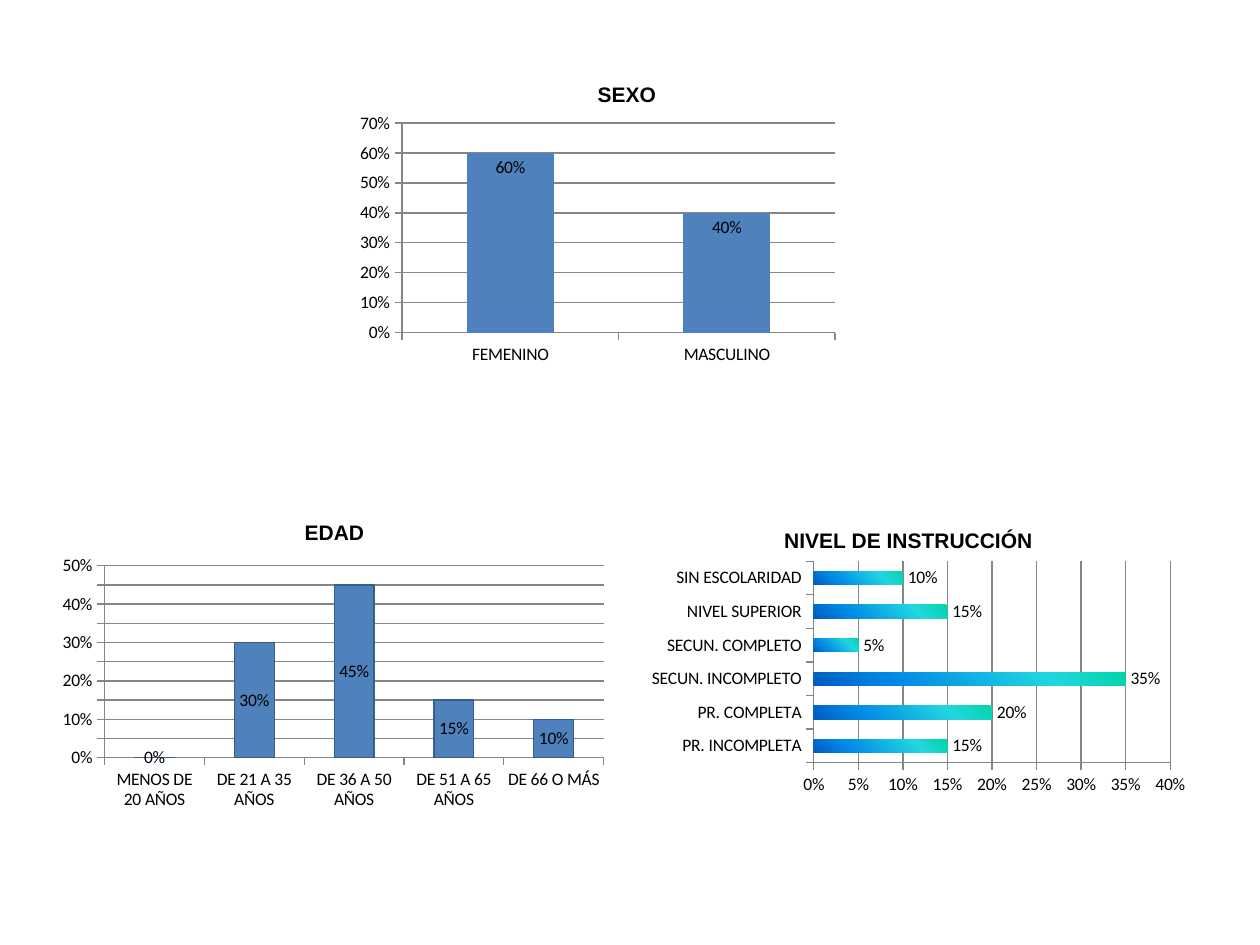
from lxml import etree
from pptx import Presentation
from pptx.chart.data import CategoryChartData
from pptx.dml.color import RGBColor
from pptx.enum import chart as kinds
from pptx.oxml.ns import qn
from pptx.util import Inches, Pt

COLOURS = {"text": "000000", "bar": "4F81BD", "outline": "385D8A", "axis": "868686"}
GRADIENT = [(0, "03D4A8"), (25, "21D6E0"), (75, "0087E6"), (100, "005CBF")]
STACKED = kinds.XL_CHART_TYPE.COLUMN_STACKED
BARS = kinds.XL_CHART_TYPE.BAR_CLUSTERED
LABEL = kinds.XL_LABEL_POSITION

CHARTS = [
    {"title": "SEXO", "type": STACKED, "at": (2.8, 0.52, 4.35, 2.41),
     "plot": (0.09, 0.19, 0.79, 0.69), "max": 0.7, "unit": 0.1,
     "label": LABEL.INSIDE_END, "fill": "solid",
     "values": {"FEMENINO": 0.6, "MASCULINO": 0.4}},
    {"title": "EDAD", "type": STACKED, "at": (0.43, 3.99, 4.45, 2.5),
     "plot": (0.09, 0.2, 0.89, 0.61), "max": 0.5, "unit": 0.05,
     "label": LABEL.CENTER, "fill": "outlined",
     "values": {"MENOS DE 20 AÑOS": 0, "DE 21 A 35 AÑOS": 0.3, "DE 36 A 50 AÑOS": 0.45,
                "DE 51 A 65 AÑOS": 0.15, "DE 66 O MÁS": 0.1}},
    {"title": "NIVEL DE INSTRUCCIÓN", "type": BARS, "at": (5, 4.06, 4.42, 2.32),
     "plot": (0.33, 0.17, 0.64, 0.69), "max": 0.4, "unit": 0.05,
     "label": LABEL.OUTSIDE_END, "fill": "gradient",
     "values": {"PR. INCOMPLETA": 0.15, "PR. COMPLETA": 0.2, "SECUN. INCOMPLETO": 0.35,
                "SECUN. COMPLETO": 0.05, "NIVEL SUPERIOR": 0.15, "SIN ESCOLARIDAD": 0.1}},
]


def set_plot_area(chart, bounds):
    """Fix the inner plot area as fractions of the chart (x, y, width, height)."""
    area = chart._chartSpace.chart.plotArea
    for old in area.findall(qn("c:layout")):
        area.remove(old)
    layout = etree.Element(qn("c:layout"))
    area.insert(0, layout)
    manual = etree.SubElement(layout, qn("c:manualLayout"))
    settings = [("layoutTarget", "inner"), ("xMode", "edge"), ("yMode", "edge")]
    settings += zip("xywh", bounds)
    for name, value in settings:
        etree.SubElement(manual, qn(f"c:{name}")).set("val", str(value))


def fill_gradient(series):
    fill = series.format.fill
    fill.gradient()
    fill.gradient_angle = 225
    stops = next(series._element.iter(qn("a:gsLst")))
    for old in list(stops):
        stops.remove(old)
    for percent, colour in GRADIENT:
        stop = etree.SubElement(stops, qn("a:gs"), pos=str(percent * 1000))
        etree.SubElement(stop, qn("a:srgbClr"), val=colour)


deck = Presentation()
deck.slide_width, deck.slide_height = Inches(10), Inches(7.5)
page = deck.slides.add_slide(deck.slide_layouts[6])

for entry in CHARTS:
    data = CategoryChartData(number_format="0%")
    data.categories = list(entry["values"])
    data.add_series("Series 1", list(entry["values"].values()))
    frame = page.shapes.add_chart(entry["type"], *map(Inches, entry["at"]), data)
    chart = frame.chart
    chart.has_legend = False
    chart.font.name = "Calibri"
    chart.font.size = Pt(10)
    chart.font.color.rgb = RGBColor.from_string(COLOURS["text"])
    set_plot_area(chart, entry["plot"])

    chart.has_title = True
    span = chart.chart_title.text_frame.paragraphs[0].add_run()
    span.text = entry["title"]
    span.font.name = "Arial"
    span.font.size = Pt(12)
    span.font.bold = True
    span.font.color.rgb = RGBColor.from_string(COLOURS["text"])
    chart.chart_title.include_in_layout = False

    values = chart.value_axis
    values.minimum_scale, values.maximum_scale = 0, entry["max"]
    values.major_unit = entry["unit"]
    values.has_major_gridlines = True
    values.tick_labels.number_format = "0%"
    values.tick_labels.number_format_is_linked = False
    for axis in (values, chart.category_axis):
        axis.major_tick_mark = kinds.XL_TICK_MARK.OUTSIDE
    for part in (values, values.major_gridlines, chart.category_axis):
        part.format.line.width = Pt(0.75)
        part.format.line.color.rgb = RGBColor.from_string(COLOURS["axis"])

    plot = chart.plots[0]
    plot.gap_width = 150
    plot.vary_by_categories = False
    if entry["type"] == STACKED:
        plot.overlap = 100
    series = plot.series[0]
    series.invert_if_negative = False
    if entry["fill"] == "gradient":
        fill_gradient(series)
    else:
        series.format.fill.solid()
        series.format.fill.fore_color.rgb = RGBColor.from_string(COLOURS["bar"])
    if entry["fill"] == "outlined":
        series.format.line.width = Pt(0.75)
        series.format.line.color.rgb = RGBColor.from_string(COLOURS["outline"])

    labels = series.data_labels
    labels.show_value = True
    labels.number_format = "0%"
    labels.number_format_is_linked = False
    labels.position = entry["label"]

deck.save("out.pptx")
